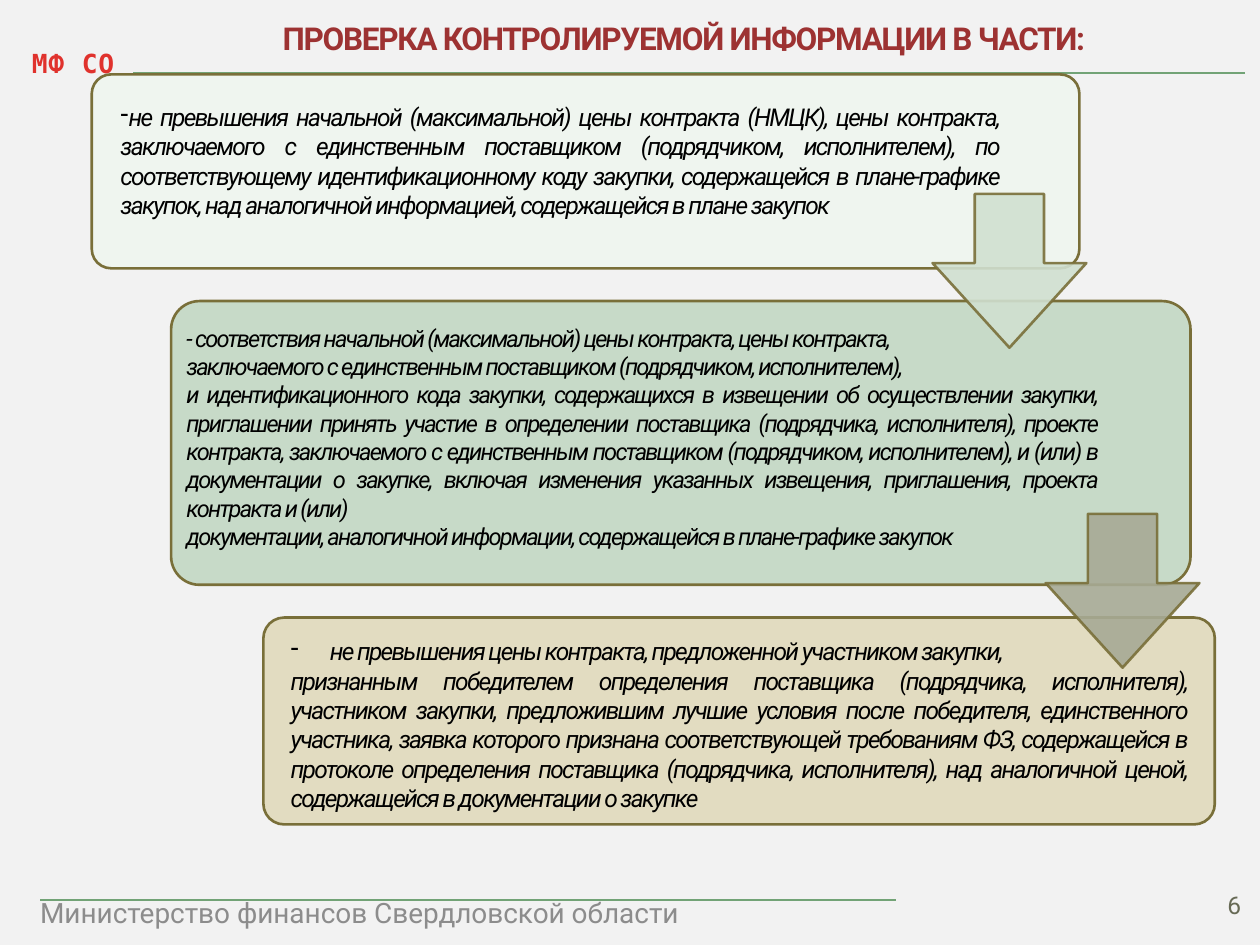
from lxml import etree
from pptx import Presentation
from pptx.dml.color import RGBColor
from pptx.enum.shapes import MSO_CONNECTOR, MSO_SHAPE as Shape
from pptx.enum.text import MSO_ANCHOR as Anchor, MSO_AUTO_SIZE as AutoSize, PP_ALIGN as Align
from pptx.oxml.ns import qn
from pptx.util import Cm, Pt

COLORS = {
    "background": "F2F2F2", "title": "9D3232", "badge": "E0322D", "text": "000000",
    "footer": "8C8C8C", "number": "676A55", "rule": "72A376", "outline": "796F39",
    "mint": "EFF5EF", "green": "C7DAC8", "sand": "E2DCC1",
    "green_arrow": "D0E0D0", "gray_arrow": "A7AA95",
}


def color(name):
    return RGBColor.from_string(COLORS[name])


class SlideBuilder:
    font = "Roboto"
    outline_width = Pt(1.5)

    def __init__(self, slide):
        self.slide = slide
        slide.background.fill.solid()
        slide.background.fill.fore_color.rgb = color("background")

    def place(self, shape, box):
        shape.left, shape.top, shape.width, shape.height = map(Cm, box)

    def style(self, paragraph, size, fill, bold=False, italic=False, spacing=0, font=None):
        for run in paragraph.runs:
            run.font.name = font or self.font
            run.font.size = Pt(size)
            run.font.bold, run.font.italic = bold, italic
            run.font.color.rgb = color(fill)
            run._r.get_or_add_rPr().set("spc", str(round(spacing * 100)))

    def title(self, text, box):
        title = self.slide.shapes.title
        self.place(title, box)
        frame = title.text_frame
        frame.text = text
        frame.auto_size = AutoSize.NONE
        frame.vertical_anchor = Anchor.TOP
        paragraph = frame.paragraphs[0]
        paragraph.alignment = Align.CENTER
        self.style(paragraph, 18, "title", bold=True, spacing=-0.75)

    def text(self, paragraphs, box, size, fill, anchor=Anchor.TOP, line_spacing=None, **style):
        """Each paragraph is a tuple: text, alignment and an optional dash indent in cm."""
        frame = self.slide.shapes.add_textbox(*map(Cm, box)).text_frame
        frame.word_wrap = True
        frame.vertical_anchor = anchor
        frame.text = "\n".join(item[0] for item in paragraphs)
        for paragraph, (_, alignment, *indent) in zip(frame.paragraphs, paragraphs):
            paragraph.alignment = alignment
            if line_spacing:
                paragraph.line_spacing = line_spacing
            if indent:
                self.dash(paragraph, indent[0])
            self.style(paragraph, size, fill, **style)

    def dash(self, paragraph, indent):
        properties = paragraph._p.get_or_add_pPr()
        properties.set("marL", str(Cm(indent)))
        properties.set("indent", str(-Cm(indent)))
        etree.SubElement(properties, qn("a:buChar")).set("char", "-")

    def shape(self, kind, box, fill, adjustments, opacity=100):
        shape = self.slide.shapes.add_shape(kind, *map(Cm, box))
        shape.shadow.inherit = False
        for index, value in enumerate(adjustments):
            shape.adjustments[index] = value
        shape.fill.solid()
        shape.fill.fore_color.rgb = color(fill)
        shape.line.color.rgb = color("outline")
        shape.line.width = self.outline_width
        if opacity < 100:
            for solid in shape._element.spPr.iter(qn("a:solidFill")):
                etree.SubElement(solid[0], qn("a:alpha")).set("val", str(opacity * 1000))

    def panel(self, box, fill):
        self.shape(Shape.ROUNDED_RECTANGLE, box, fill, [0.1])

    def arrow(self, left, top, fill):
        self.shape(Shape.DOWN_ARROW, (left, top, 3.1, 3.1), fill, [0.45, 0.55], opacity=90)

    def rule(self, left, right, y):
        line = self.slide.shapes.add_connector(
            MSO_CONNECTOR.STRAIGHT, Cm(left), Cm(y), Cm(right), Cm(y))
        line.line.color.rgb = color("rule")
        line.line.width = Pt(0.94)
        etree.SubElement(line._element.spPr, qn("a:effectLst"))


def main():
    presentation = Presentation()
    presentation.slide_width, presentation.slide_height = Cm(25.4), Cm(19.05)
    builder = SlideBuilder(presentation.slides.add_slide(presentation.slide_layouts[5]))

    # Header, footer and page number
    builder.title("ПРОВЕРКА КОНТРОЛИРУЕМОЙ ИНФОРМАЦИИ В ЧАСТИ:", (4.55, 0.25, 18.47, 1.02))
    builder.text([("МФ СО", Align.CENTER)], (-0.15, 0.74, 3.25, 0.99), 15, "badge",
                 line_spacing=1.15, bold=True, spacing=0.5, font="DejaVu Sans Mono")
    builder.rule(2.69, 25.1, 1.47)
    builder.text([("Министерство финансов Свердловской области", Align.LEFT)],
                 (0.56, 17.93, 18.24, 0.94), 16, "footer")
    builder.rule(0.81, 18.06, 18.14)
    builder.text([("6", Align.RIGHT)], (23.72, 17.65, 1.55, 1.02), 14, "number",
                 anchor=Anchor.BOTTOM)

    # Staggered panels and the arrows between them
    builder.panel((1.85, 1.5, 19.91, 3.91), "mint")
    builder.panel((3.45, 6.07, 20.55, 5.72), "green")
    builder.panel((5.31, 12.45, 19.18, 4.17), "sand")
    builder.arrow(18.8, 3.91, "green_arrow")
    builder.arrow(21.08, 10.36, "gray_arrow")

    # Panel texts
    body = {"fill": "text", "italic": True, "spacing": -1}
    builder.text([
        ("не превышения начальной (максимальной) цены контракта (НМЦК), цены контракта, "
         "заключаемого с единственным поставщиком (подрядчиком, исполнителем), по "
         "соответствующему идентификационному коду закупки, содержащейся в плане-графике "
         "закупок, над аналогичной информацией, содержащейся в плане закупок",
         Align.JUSTIFY, 0),
    ], (2.18, 1.93, 18.21, 3.25), 14, **body)
    builder.text([
        ("- соответствия начальной (максимальной) цены контракта, цены контракта,", Align.LEFT),
        ("заключаемого с единственным поставщиком (подрядчиком, исполнителем),", Align.LEFT),
        ("и идентификационного кода закупки, содержащихся в извещении об осуществлении "
         "закупки, приглашении принять участие в определении поставщика (подрядчика, "
         "исполнителя), проекте контракта, заключаемого с единственным поставщиком "
         "(подрядчиком, исполнителем), и (или) в документации о закупке, включая изменения "
         "указанных извещения, приглашения, проекта контракта и (или)", Align.JUSTIFY),
        ("документации, аналогичной информации, содержащейся в плане-графике закупок",
         Align.JUSTIFY),
    ], (3.51, 6.4, 18.87, 5.05), 13.5, **body)
    builder.text([
        ("не превышения цены контракта, предложенной участником закупки,",
         Align.JUSTIFY, 0.79),
        ("признанным победителем определения поставщика (подрядчика, исполнителя), "
         "участником закупки, предложившим лучшие условия после победителя, единственного "
         "участника, заявка которого признана соответствующей требованиям ФЗ, содержащейся в "
         "протоколе определения поставщика (подрядчика, исполнителя), над аналогичной ценой, "
         "содержащейся в документации о закупке", Align.JUSTIFY),
    ], (5.61, 12.7, 18.57, 3.84), 14, **body)

    presentation.save("out.pptx")


if __name__ == "__main__":
    main()
